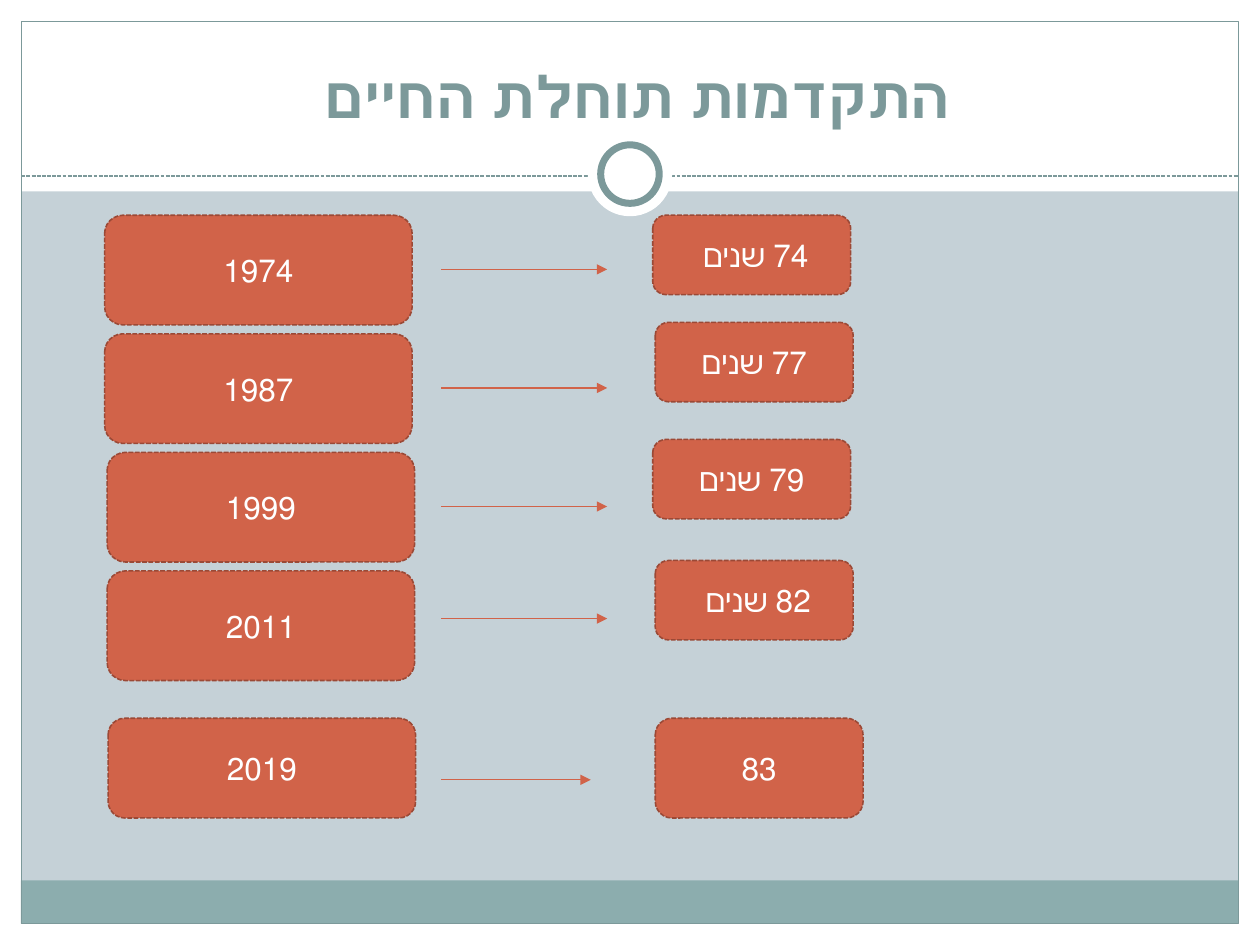
from typing import NamedTuple

from lxml import etree
from pptx import Presentation
from pptx.dml.color import RGBColor
from pptx.enum.dml import MSO_LINE
from pptx.enum.shapes import MSO_CONNECTOR, MSO_SHAPE
from pptx.enum.text import MSO_ANCHOR, PP_ALIGN
from pptx.oxml.ns import qn
from pptx.util import Cm, Pt

RECT, ROUNDED, OVAL = MSO_SHAPE.RECTANGLE, MSO_SHAPE.ROUNDED_RECTANGLE, MSO_SHAPE.OVAL
STRAIGHT = MSO_CONNECTOR.STRAIGHT
DASH = MSO_LINE.SQUARE_DOT
CENTER = PP_ALIGN.CENTER
MIDDLE, BOTTOM = MSO_ANCHOR.MIDDLE, MSO_ANCHOR.BOTTOM

FONT = "TeX Gyre Schola"
COLORS = {
    "background": "C5D1D7",
    "white": "FFFFFF",
    "footer": "8CADAE",
    "frame": "7C999A",
    "box": "D16349",
    "box_edge": "9B4936",
}


class Area(NamedTuple):
    """Position and size in centimetres."""
    left: float
    top: float
    width: float
    height: float


class Milestone(NamedTuple):
    """A year, its life expectancy and the arrow between them."""
    year: str
    year_area: Area
    expectancy: str
    expectancy_area: Area
    arrow_y: float
    arrow_end: float = 12.24


def color(key: str) -> RGBColor:
    return RGBColor.from_string(COLORS[key])


def style_line(line, key: str, weight: float, dash=None) -> None:
    line.color.rgb = color(key)
    line.width = Pt(weight)
    if dash is not None:
        line.dash_style = dash


def write(frame, text: str, *, size: float, key: str, bold: bool = False,
          anchor=MIDDLE) -> None:
    frame.word_wrap = True
    frame.vertical_anchor = anchor
    paragraph = frame.paragraphs[0]
    paragraph.alignment = CENTER
    paragraph._p.get_or_add_pPr().set("rtl", "1")
    run = paragraph.add_run()
    run.text = text
    run.font.name = FONT
    run.font.size = Pt(size)
    run.font.bold = bold
    run.font.color.rgb = color(key)


def add_block(slide, kind, area: Area, *, fill=None, edge=None,
              weight: float = 0.75, dash=None):
    block = slide.shapes.add_shape(kind, *map(Cm, area))
    block.shadow.inherit = False
    if fill:
        block.fill.solid()
        block.fill.fore_color.rgb = color(fill)
    else:
        block.fill.background()
    if edge:
        style_line(block.line, edge, weight, dash)
    else:
        block.line.fill.background()
    return block


def add_rule(slide, start: float, end: float, y: float, key: str, *,
             dash=None, arrow: bool = False) -> None:
    rule = slide.shapes.add_connector(STRAIGHT, Cm(start), Cm(y), Cm(end), Cm(y))
    style_line(rule.line, key, 0.75, dash)
    if arrow:
        etree.SubElement(rule.line._ln, qn("a:tailEnd"), type="triangle")
    etree.SubElement(rule._element.spPr, qn("a:effectLst"))


def add_label(slide, text: str, area: Area) -> None:
    label = add_block(slide, ROUNDED, area, fill="box", edge="box_edge",
                      weight=0.9, dash=DASH)
    write(label.text_frame, text, size=18, key="white")


def add_milestone(slide, item: Milestone) -> None:
    add_label(slide, item.year, item.year_area)
    add_rule(slide, 8.89, item.arrow_end, item.arrow_y, "box", arrow=True)
    add_label(slide, item.expectancy, item.expectancy_area)


YEAR_TOP, YEAR_STEP = 4.34, 2.39
YEAR_SIZE, EXPECTANCY_SIZE = (6.2, 2.21), (3.99, 1.6)
# year, year left, expectancy, expectancy left, expectancy top, arrow y
ROWS = [
    ("1974", 2.11, "74 שנים ", 13.16, 4.34, 5.43),
    ("1987", 2.11, "77 שנים", 13.21, 6.5, 7.82),
    ("1999", 2.16, "79 שנים", 13.16, 8.86, 10.21),
    ("2011", 2.16, "82 שנים ", 13.21, 11.3, 12.47),
]
MILESTONES = [
    Milestone(year, Area(year_left, YEAR_TOP + i * YEAR_STEP, *YEAR_SIZE),
              expectancy, Area(left, top, *EXPECTANCY_SIZE), arrow_y)
    for i, (year, year_left, expectancy, left, top, arrow_y) in enumerate(ROWS)
] + [
    Milestone("2019", Area(2.18, 14.48, 6.2, 2.01),
              "83", Area(13.21, 14.48, 4.19, 2.01), 15.72, 11.91),
]


def main() -> None:
    deck = Presentation()
    deck.slide_width, deck.slide_height = Cm(25.4), Cm(19.05)
    slide = deck.slides.add_slide(deck.slide_layouts[6])
    slide.background.fill.solid()
    slide.background.fill.fore_color.rgb = color("background")

    # White margins and header
    for margin in (Area(0, 18.62, 25.4, 0.43), Area(0, 0, 25.4, 3.86),
                   Area(0, 0, 0.43, 19.05), Area(24.97, 0, 0.43, 19.05)):
        add_block(slide, RECT, margin, fill="white")

    # Footer band, frame and header rule with its ring
    add_block(slide, RECT, Area(0.42, 17.75, 24.54, 0.87), fill="footer")
    add_block(slide, RECT, Area(0.43, 0.43, 24.54, 18.19), edge="frame")
    add_rule(slide, 0.43, 24.97, 3.55, "frame", dash=DASH)
    add_block(slide, OVAL, Area(11.85, 2.66, 1.7, 1.7), fill="white")
    add_block(slide, OVAL, Area(12.11, 2.92, 1.18, 1.18), fill="white",
              edge="frame", weight=4)

    # Title
    title = slide.shapes.add_textbox(*map(Cm, (0.84, 0.64, 23.7, 2.11)))
    write(title.text_frame, "התקדמות תוחלת החיים ", size=33, key="frame",
          bold=True, anchor=BOTTOM)

    # Years and life expectancy
    for item in MILESTONES:
        add_milestone(slide, item)

    deck.save("out.pptx")


if __name__ == "__main__":
    main()
